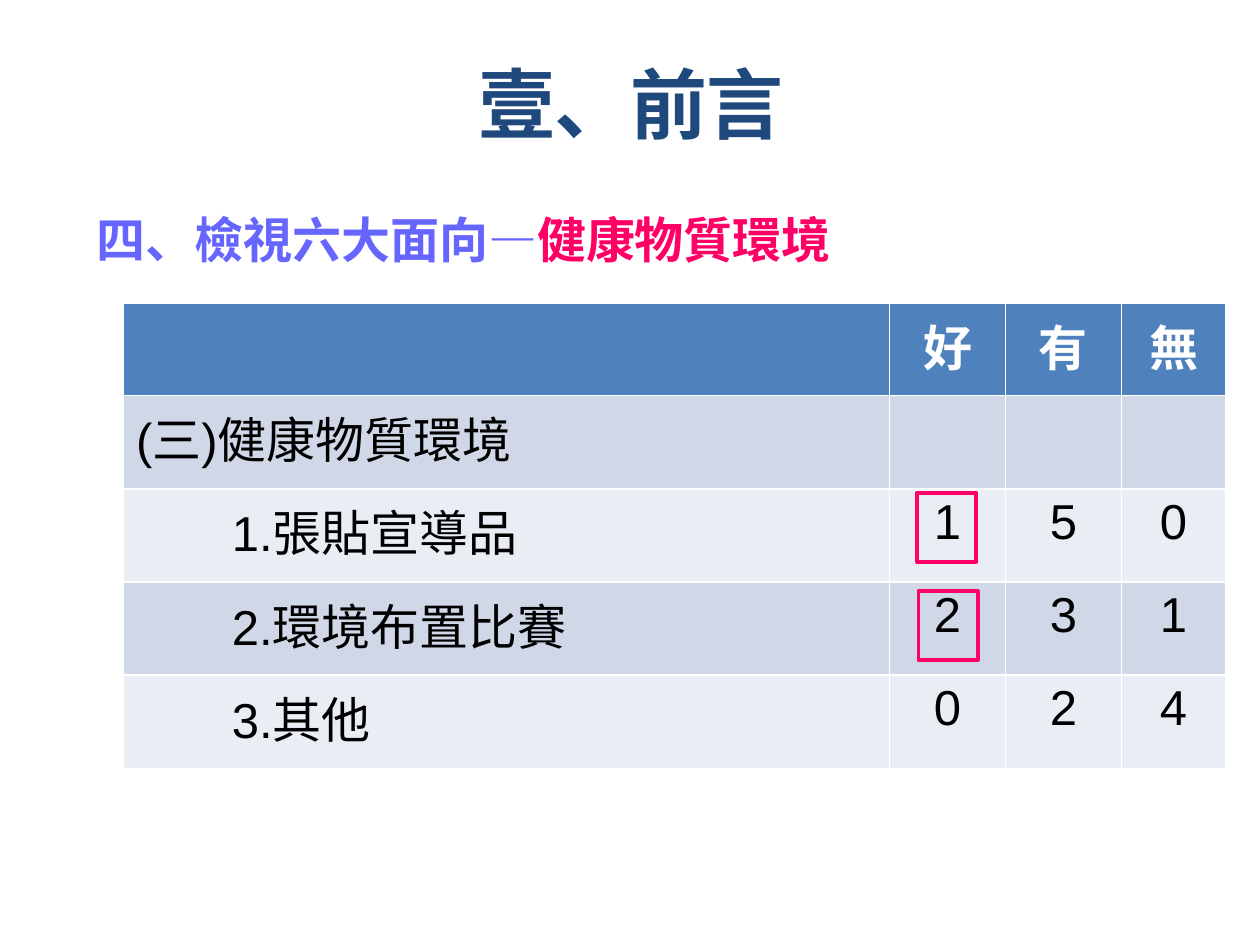
from pptx import Presentation
from pptx.dml.color import RGBColor
from pptx.enum.shapes import MSO_SHAPE
from pptx.enum.text import MSO_ANCHOR, PP_ALIGN
from pptx.util import Inches, Pt

RECTANGLE = MSO_SHAPE.RECTANGLE
BOTTOM = MSO_ANCHOR.BOTTOM
CENTER = PP_ALIGN.CENTER
LEFT = PP_ALIGN.LEFT

WHITE = RGBColor(0xFF, 0xFF, 0xFF)
BLACK = RGBColor(0x00, 0x00, 0x00)
NAVY = RGBColor(0x1F, 0x49, 0x7D)
VIOLET = RGBColor(0x66, 0x66, 0xFF)
PINK = RGBColor(0xFF, 0x00, 0x66)
HEADER_BLUE = RGBColor(0x4F, 0x81, 0xBD)
BAND_DARK = RGBColor(0xD0, 0xD8, 0xE8)
BAND_LIGHT = RGBColor(0xE9, 0xED, 0xF4)

COLUMN_WIDTHS = (6.08, 0.92, 0.92, 0.83)
ROW_HEIGHTS = (0.73, 0.74, 0.74, 0.74, 0.74)
RATINGS = (
    ("", "好", "有", "無"),
    ("(三)健康物質環境", "", "", ""),
    ("1.張貼宣導品", "1", "5", "0"),
    ("2.環境布置比賽", "2", "3", "1"),
    ("3.其他", "0", "2", "4"),
)


def style_run(run, size, color, font_name, bold):
    """Give a run its font, size, weight and colour."""
    run.font.name = font_name
    run.font.size = Pt(size)
    run.font.bold = bold
    run.font.color.rgb = color


def add_title(slide, left, top, width, height):
    """Place the centred chapter title at the bottom of its box."""
    title = slide.shapes.add_textbox(left, top, width, height).text_frame
    title.word_wrap = True
    title.vertical_anchor = BOTTOM
    title.text = "壹、前言"
    heading = title.paragraphs[0]
    heading.alignment = CENTER
    style_run(heading.runs[0], 44, NAVY, "Times New Roman", True)
    heading.runs[0].font._element.set("spc", "-60")


def add_section_heading(slide, left, top, width, height):
    """Place the two-colour section heading."""
    section = slide.shapes.add_textbox(left, top, width, height).text_frame
    section.word_wrap = True
    heading = section.paragraphs[0]
    heading.line_spacing = 1.3
    for wording, color in (("四、檢視六大面向—", VIOLET), ("健康物質環境", PINK)):
        run = heading.add_run()
        run.text = wording
        style_run(run, 28, color, "Times New Roman", True)


def fill_cell(cell, wording, row, column):
    """Write one cell with the look of its row and column."""
    is_header = row == 0
    cell.fill.solid()
    band = BAND_DARK if row % 2 else BAND_LIGHT
    cell.fill.fore_color.rgb = HEADER_BLUE if is_header else band
    if column == 0 and row > 1:
        cell.margin_left = Inches(0.86)
    cell.text = wording
    entry = cell.text_frame.paragraphs[0]
    entry.alignment = CENTER if column else LEFT
    for run in entry.runs:
        style_run(run, 28, WHITE if is_header else BLACK, "Arial", is_header)


def add_ratings_table(slide, left, top, width, height):
    """Place the ratings table with its banded rows."""
    table = slide.shapes.add_table(
        len(RATINGS), len(COLUMN_WIDTHS), left, top, width, height
    ).table
    for column, column_width in zip(table.columns, COLUMN_WIDTHS):
        column.width = Inches(column_width)
    for row, row_height in zip(table.rows, ROW_HEIGHTS):
        row.height = Inches(row_height)
    for row, entries in enumerate(RATINGS):
        for column, wording in enumerate(entries):
            fill_cell(table.cell(row, column), wording, row, column)


def add_highlight(slide, left, top, width, height):
    """Frame one rating with a pink outline."""
    frame = slide.shapes.add_shape(RECTANGLE, left, top, width, height)
    frame.shadow.inherit = False
    frame.fill.background()
    frame.line.color.rgb = PINK
    frame.line.width = Pt(2.25)


def main():
    """Build the slide and save it."""
    deck = Presentation()
    deck.slide_width = Inches(10)
    deck.slide_height = Inches(7.5)
    slide = deck.slides.add_slide(deck.slide_layouts[6])
    add_title(slide, Inches(0.28), Inches(0.32), Inches(9.45), Inches(0.91))
    add_section_heading(slide, Inches(0.67), Inches(1.47), Inches(7.64), Inches(0.79))
    add_ratings_table(slide, Inches(0.98), Inches(2.41), Inches(8.74), Inches(3.67))
    for left, top in ((7.28, 3.91), (7.29, 4.69)):
        add_highlight(slide, Inches(left), Inches(top), Inches(0.47), Inches(0.55))
    deck.save("out.pptx")


if __name__ == "__main__":
    main()
